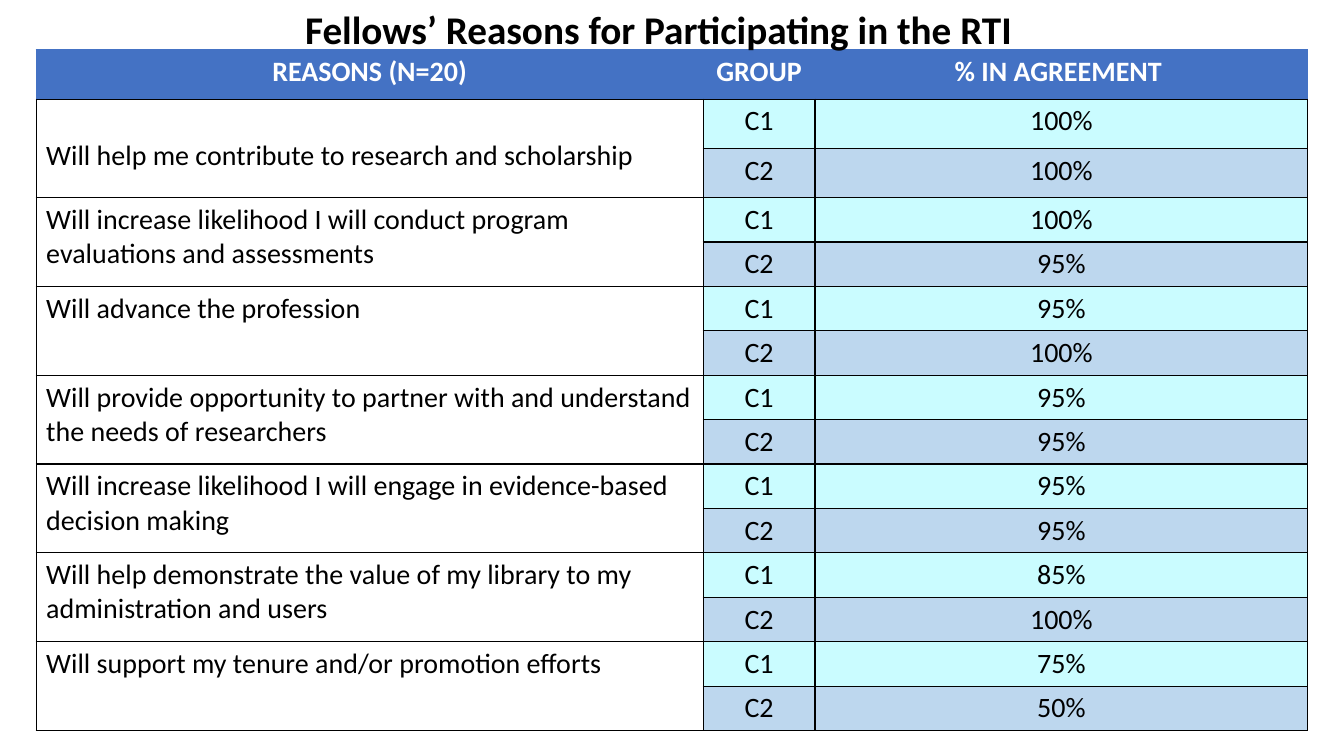
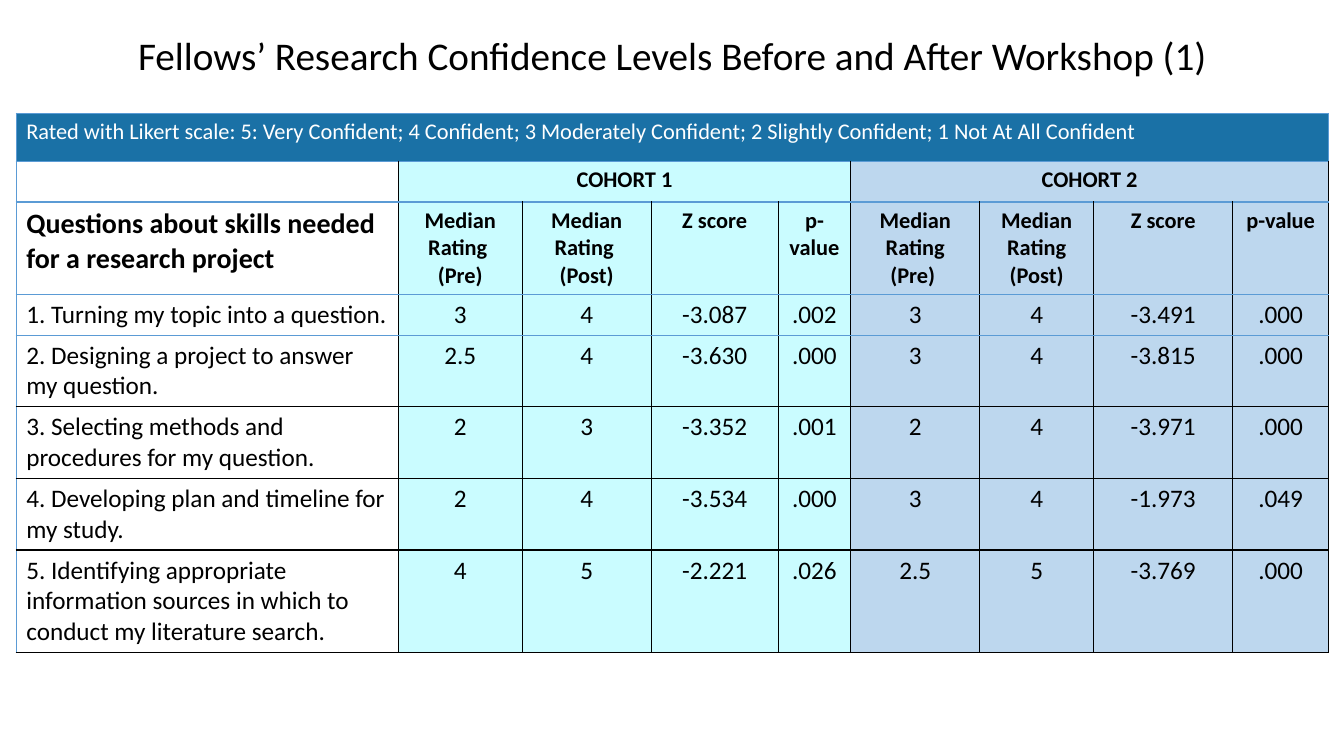
from dataclasses import dataclass

from lxml import etree
from pptx import Presentation
from pptx.dml.color import RGBColor
from pptx.enum import text as text_enum
from pptx.oxml import ns
from pptx.util import Cm, Pt


@dataclass(frozen=True)
class Theme:
    font: str = "Calibri"
    black: str = "000000"
    white: str = "FFFFFF"
    header: str = "4472C4"
    scale: str = "1A71A6"
    rule: str = "5B9BD5"
    first_cohort: str = "CAFCFF"
    second_cohort: str = "BDD7EE"
    title_size: int = 28
    large: int = 20
    medium: int = 18
    small: int = 16


THEME = Theme()
LEFT = text_enum.PP_ALIGN.LEFT
CENTER = text_enum.PP_ALIGN.CENTER

REASONS_TITLE = "Fellows’ Reasons for Participating in the RTI "
REASONS_HEADER = ["REASONS (N=20)", "GROUP", "% IN AGREEMENT "]
REASONS = [
    ("Will help me contribute to research and scholarship", "100%", "100%"),
    ("Will increase likelihood I will conduct program evaluations and assessments", "100%", "95%"),
    ("Will advance the profession", "95%", "100%"),
    ("Will provide opportunity to partner with and understand the needs of researchers", "95%", "95%"),
    ("Will increase likelihood I will engage in evidence-based decision making", "95%", "95%"),
    ("Will help demonstrate the value of my library to my administration and users", "85%", "100%"),
    ("Will support my tenure and/or promotion efforts", "75%", "50%"),
]
REASONS_COLUMNS = [16.81, 2.82, 12.42]
REASONS_ROWS = [1.24] * 3 + [1.1] * 12

CONFIDENCE_TITLE = "Fellows’ Research Confidence Levels Before and After Workshop (1)"
LIKERT_SCALE = (
    "Rated with Likert scale: 5: Very Confident; 4 Confident; "
    "3 Moderately Confident; 2 Slightly Confident; 1 Not At All Confident"
)
COHORTS = ["COHORT 1", "COHORT 2"]
MEASURES = [
    "Questions about skills needed for a research project",
    "Median Rating \n(Pre)", "Median Rating \n(Post)", "Z score", "p-value",
    "Median Rating (Pre) ", "Median Rating (Post)", "Z score", "p-value",
]
RATINGS = [
    ("1. Turning my topic into a question.",
     "3", "4", "-3.087", ".002", "3", "4", "-3.491", ".000"),
    ("2. Designing a project to answer my question.",
     "2.5", "4", "-3.630", ".000", "3", "4", "-3.815", ".000"),
    ("3. Selecting methods and procedures for my question.",
     "2", "3", "-3.352", ".001", "2", "4", "-3.971", ".000"),
    ("4. Developing plan and timeline for my study.",
     "2", "4", "-3.534", ".000", "3", "4", "-1.973", ".049"),
    ("5. Identifying appropriate information sources in which to conduct my literature search.",
     "4", "5", "-2.221", ".026", "2.5", "5", "-3.769", ".000"),
]
CONFIDENCE_COLUMNS = [9.63, 3.12, 3.25, 3.2, 1.83, 3.25, 2.87, 3.51, 2.41]
CONFIDENCE_ROWS = [1.2, 0.93, 2.29, 1.0, 1.78, 1.78, 1.78, 2.54]


def format_text(frame, size, color, bold, align):
    for para in frame.paragraphs:
        para.alignment = align
        for span in para.runs:
            span.font.name = THEME.font
            span.font.size = Pt(size)
            span.font.bold = bold
            span.font.color.rgb = RGBColor.from_string(color)


def set_borders(cell, left, right, top, bottom):
    properties = cell._tc.get_or_add_tcPr()
    for side, color in zip("LRTB", (left, right, top, bottom)):
        line = etree.SubElement(properties, ns.qn("a:ln" + side), w=str(Pt(1)))
        fill = etree.SubElement(line, ns.qn("a:solidFill"))
        etree.SubElement(fill, ns.qn("a:srgbClr"), val=color)


def format_cell(cell, content, borders, fill=None, size=THEME.large,
                color=THEME.black, bold=False, align=CENTER):
    set_borders(cell, *borders)
    if fill:
        cell.fill.solid()
        cell.fill.fore_color.rgb = RGBColor.from_string(fill)
    else:
        cell.fill.background()
    if content:
        cell.text_frame.text = content
        format_text(cell.text_frame, size, color, bold, align)


def add_page(deck, heading, place, bold=False):
    page = deck.slides.add_slide(deck.slide_layouts[5])
    title = page.shapes.title
    title.left, title.top, title.width, title.height = map(Cm, place)
    frame = title.text_frame
    frame.text = heading
    frame.word_wrap = True
    frame.vertical_anchor = text_enum.MSO_ANCHOR.TOP
    format_text(frame, THEME.title_size, THEME.black, bold, CENTER)
    return page


def add_grid(page, left, top, columns, rows):
    frame = page.shapes.add_table(
        len(rows), len(columns), Cm(left), Cm(top), Cm(sum(columns)), Cm(sum(rows)))
    table = frame.table
    table.first_row = table.horz_banding = False
    for column, width in zip(table.columns, columns):
        column.width = Cm(width)
    for row, height in zip(table.rows, rows):
        row.height = Cm(height)
    page.shapes.element.append(page.shapes.title.element)
    return table


def build_reasons(deck):
    page = add_page(deck, REASONS_TITLE, (-0.48, 0, 34.37, 1.45), bold=True)
    table = add_grid(page, 0.91, 1.26, REASONS_COLUMNS, REASONS_ROWS)
    header_borders = [THEME.header] * 3 + [THEME.black]
    for index, heading in enumerate(REASONS_HEADER):
        format_cell(table.cell(0, index), heading, header_borders,
                    THEME.header, color=THEME.white, bold=True)
    black_borders = [THEME.black] * 4
    groups = [("C1", THEME.first_cohort), ("C2", THEME.second_cohort)]
    for index, (reason, *shares) in enumerate(REASONS):
        first_row = 1 + 2 * index
        table.cell(first_row, 0).merge(table.cell(first_row + 1, 0))
        for offset, ((group, fill), share) in enumerate(zip(groups, shares)):
            row = first_row + offset
            format_cell(table.cell(row, 0), "" if offset else reason,
                        black_borders, THEME.white, align=LEFT)
            format_cell(table.cell(row, 1), group, black_borders, fill)
            format_cell(table.cell(row, 2), share, black_borders, fill)
    table.cell(1, 0).margin_top = Cm(1)


def build_confidence(deck):
    page = add_page(deck, CONFIDENCE_TITLE, (0.81, 0.66, 32.26, 1.45))
    table = add_grid(page, 0.41, 2.86, CONFIDENCE_COLUMNS, CONFIDENCE_ROWS)
    last = len(CONFIDENCE_COLUMNS) - 1
    table.cell(0, 0).merge(table.cell(0, last))
    for start in (1, 5):
        table.cell(1, start).merge(table.cell(1, start + 3))
    gap = [""] * 3
    rows = [
        [LIKERT_SCALE] + [""] * last,
        ["", COHORTS[0], *gap, COHORTS[1], *gap],
        MEASURES,
        *RATINGS,
    ]
    fills = [None] + [THEME.first_cohort] * 4 + [THEME.second_cohort] * 4
    for row, contents in enumerate(rows):
        top = THEME.rule if row < 5 else THEME.black
        bottom = THEME.rule if row < 4 else THEME.black
        for column, content in enumerate(contents):
            cell = table.cell(row, column)
            if row == 0:
                format_cell(cell, content, [THEME.rule] * 4, THEME.scale,
                            THEME.small, THEME.white, align=LEFT)
                continue
            heading = row < 3
            size = THEME.small if heading else THEME.medium
            if row == 2 and column == 0:
                size = THEME.large
            left = THEME.black if column else THEME.rule
            format_cell(cell, content, (left, THEME.black, top, bottom), fills[column],
                        size, bold=heading, align=CENTER if column else LEFT)


def main():
    deck = Presentation()
    deck.slide_width, deck.slide_height = Cm(33.87), Cm(19.05)
    build_reasons(deck)
    build_confidence(deck)
    deck.save("out.pptx")


if __name__ == "__main__":
    main()
